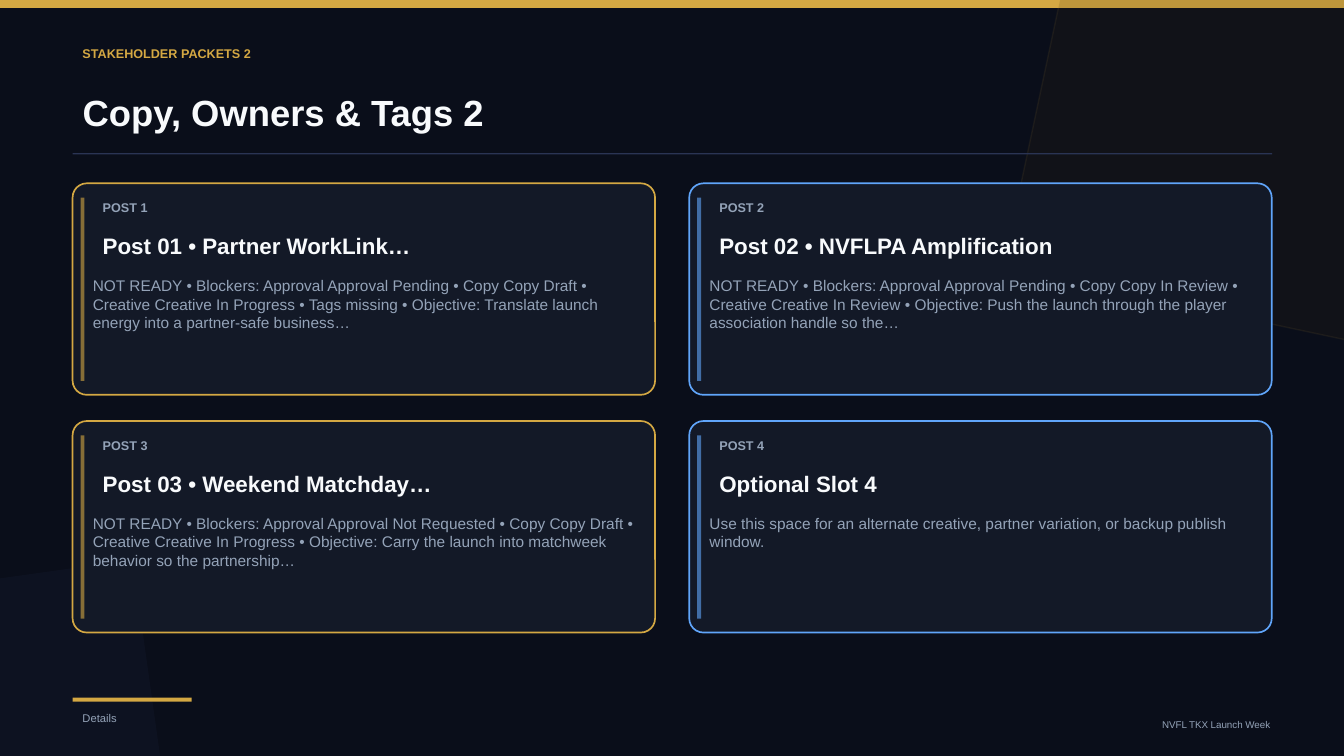
from lxml import etree
from pptx import Presentation
from pptx import util as u
from pptx.dml import color
from pptx.enum import shapes, text
from pptx.oxml import ns

COLORS = {
    "night": "0A0E1A",
    "panel": "131927",
    "gold": "D4A843",
    "bronze": "3D2E10",
    "blue": "60A5FA",
    "navy": "2A3454",
    "white": "F8FAFC",
    "muted": "94A3B8",
}
SLIDE_WIDTH, SLIDE_HEIGHT = 33.87, 19.05
MARGIN = 1.83
CARD_WIDTH, CARD_HEIGHT = 14.68, 5.33
CARDS_TOP = 4.62
COLUMN_STEP, ROW_STEP = 15.54, 5.99
CARD_INDENT, CARD_TEXT_WIDTH = 0.51, 13.67

POSTS = [
    ("Post 01 • Partner WorkLink…",
     "NOT READY • Blockers: Approval Approval Pending • Copy Copy Draft • "
     "Creative Creative In Progress • Tags missing • Objective: Translate launch "
     "energy into a partner-safe business…"),
    ("Post 02 • NVFLPA Amplification",
     "NOT READY • Blockers: Approval Approval Pending • Copy Copy In Review • "
     "Creative Creative In Review • Objective: Push the launch through the player "
     "association handle so the…"),
    ("Post 03 • Weekend Matchday…",
     "NOT READY • Blockers: Approval Approval Not Requested • Copy Copy Draft • "
     "Creative Creative In Progress • Objective: Carry the launch into matchweek "
     "behavior so the partnership…"),
    ("Optional Slot 4",
     "Use this space for an alternate creative, partner variation, or backup "
     "publish window."),
]


def rgb(name):
    return color.RGBColor.from_string(COLORS[name])


def set_opacity(shape, parent_tags, percent):
    """Make the solid colour under parent_tags of the shape properties see-through."""
    route = "/".join(ns.qn(tag) for tag in (*parent_tags, "a:solidFill", "a:srgbClr"))
    swatch = shape._element.spPr.find(route)
    etree.SubElement(swatch, ns.qn("a:alpha")).set("val", str(percent * 1000))


class SlideBuilder:
    font = "Arial"

    def __init__(self, deck):
        self.slide = deck.slides.add_slide(deck.slide_layouts[5])
        self.slide.background.fill.solid()
        self.slide.background.fill.fore_color.rgb = rgb("night")

    def block(self, box, fill, opacity=None, radius=None, line=None, line_width=1.2,
              line_opacity=None, rotation=0):
        """Add a rectangle, rounded when a radius ratio is given."""
        kind = shapes.MSO_SHAPE.RECTANGLE if radius is None else shapes.MSO_SHAPE.ROUNDED_RECTANGLE
        shape = self.slide.shapes.add_shape(kind, *map(u.Cm, box))
        shape.shadow.inherit = False
        shape.rotation = rotation
        if radius is not None:
            shape.adjustments[0] = radius
        shape.fill.solid()
        shape.fill.fore_color.rgb = rgb(fill)
        if opacity is not None:
            set_opacity(shape, (), opacity)
        if line is None:
            shape.line.fill.background()
            return
        shape.line.color.rgb = rgb(line)
        shape.line.width = u.Pt(line_width)
        if line_opacity is not None:
            set_opacity(shape, ("a:ln",), line_opacity)

    def set_text(self, frame, words, size, ink, bold=False, align=text.PP_ALIGN.LEFT,
                 anchor=text.MSO_ANCHOR.MIDDLE):
        frame.word_wrap = True
        frame.auto_size = text.MSO_AUTO_SIZE.NONE
        frame.vertical_anchor = anchor
        paragraph = frame.paragraphs[0]
        paragraph.alignment = align
        run = paragraph.add_run()
        run.text = words
        run.font.name = self.font
        run.font.size = u.Pt(size)
        run.font.bold = bold
        run.font.color.rgb = rgb(ink)

    def title(self, box, words):
        heading = self.slide.shapes.title
        heading.left, heading.top, heading.width, heading.height = map(u.Cm, box)
        self.set_text(heading.text_frame, words, 26, "white", bold=True)

    def label(self, box, words, size, ink, **style):
        frame = self.slide.shapes.add_textbox(*map(u.Cm, box)).text_frame
        self.set_text(frame, words, size, ink, **style)

    def body(self, box, words):
        """Add top-anchored copy without insets."""
        frame = self.slide.shapes.add_textbox(*map(u.Cm, box)).text_frame
        frame.margin_left = frame.margin_right = frame.margin_top = frame.margin_bottom = 0
        self.set_text(frame, words, 11, "muted", anchor=text.MSO_ANCHOR.TOP)

    def card(self, left, top, accent, tag, heading, copy_text):
        self.block((left, top, CARD_WIDTH, CARD_HEIGHT), "panel", radius=0.067, line=accent)
        self.block((left + 0.2, top + 0.36, 0.1, 4.62), accent, opacity=60)
        text_left = left + CARD_INDENT
        self.label((text_left, top + 0.36, CARD_TEXT_WIDTH, 0.51), tag, 9, "muted", bold=True)
        self.label((text_left, top + 1.02, CARD_TEXT_WIDTH, 1.12), heading, 16, "white", bold=True)
        self.body((text_left, top + 2.34, CARD_TEXT_WIDTH, 2.59), copy_text)


def main():
    deck = Presentation()
    deck.slide_width, deck.slide_height = u.Cm(SLIDE_WIDTH), u.Cm(SLIDE_HEIGHT)
    page = SlideBuilder(deck)

    page.block((0, 0, SLIDE_WIDTH, 0.2), "gold")
    page.block((26.42, -4.06, 12.19, 12.19), "bronze", opacity=14, radius=0.062,
               line="gold", line_width=1, line_opacity=8, rotation=12)
    page.block((-5.59, 14.73, 9.65, 9.65), "navy", opacity=12, radius=0.066, rotation=352)

    page.label((23.5, 18.03, 8.76, 0.46), "NVFL TKX Launch Week", 7, "muted",
               align=text.PP_ALIGN.RIGHT)
    page.label((MARGIN, 1.07, 13.21, 0.56), "STAKEHOLDER PACKETS 2", 9, "gold", bold=True)
    page.title((MARGIN, 1.98, 18.8, 1.68), "Copy, Owners & Tags 2")
    page.block((MARGIN, 3.86, 30.23, 0.03), "navy")
    page.block((MARGIN, 17.58, 3, 0.1), "gold")
    page.label((MARGIN, 17.83, 8.64, 0.51), "Details", 8, "muted")

    for index, (heading, copy_text) in enumerate(POSTS):
        row, column = divmod(index, 2)
        page.card(MARGIN + column * COLUMN_STEP, CARDS_TOP + row * ROW_STEP,
                  ("gold", "blue")[column], f"POST {index + 1}", heading, copy_text)

    deck.save("out.pptx")


if __name__ == "__main__":
    main()
